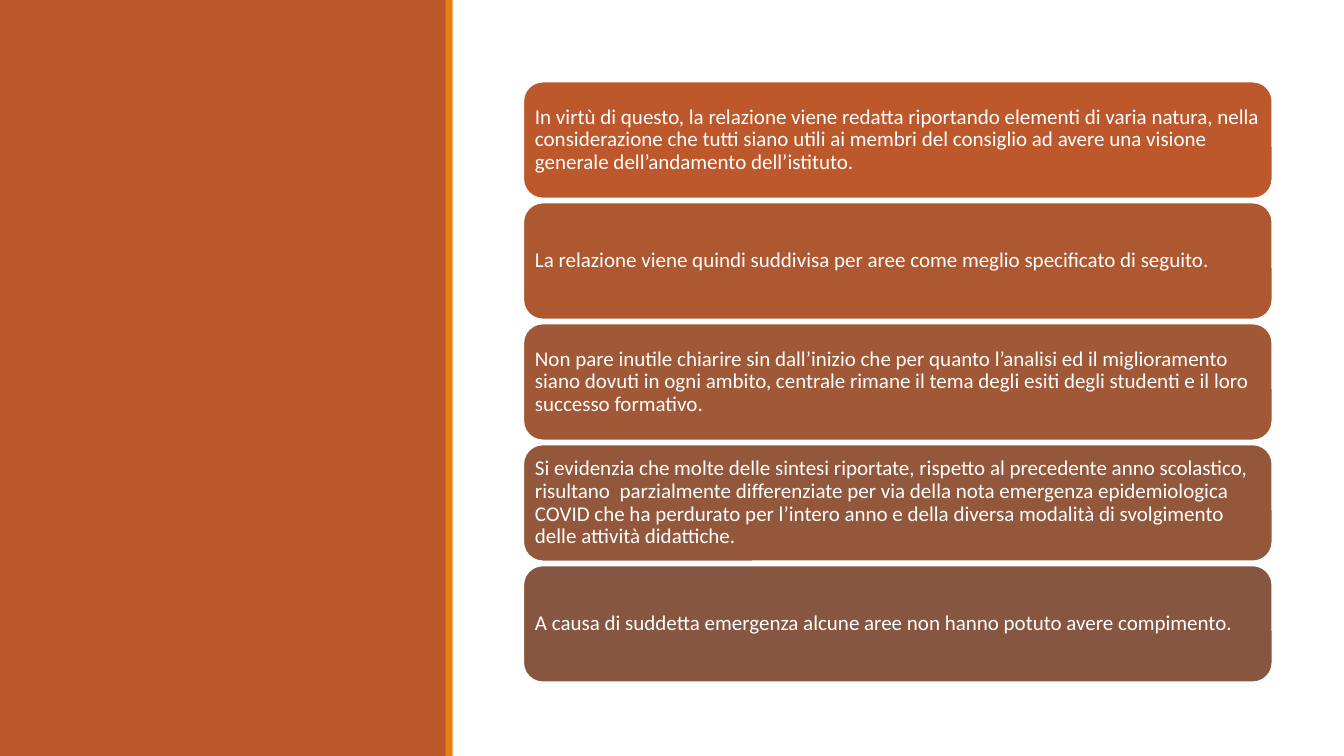
"""Builds a slide with a coloured side panel and five stacked statements."""
from pptx import Presentation
from pptx.dml.color import RGBColor
from pptx.enum.shapes import MSO_SHAPE
from pptx.enum.text import MSO_ANCHOR, PP_ALIGN
from pptx.util import Inches, Pt

STATEMENTS = [
    ("In virtù di questo, la relazione viene redatta riportando elementi di varia natura, "
     "nella considerazione che tutti siano utili ai membri del consiglio ad avere una "
     "visione generale dell’andamento dell’istituto.", "BD582C"),
    ("La relazione viene quindi suddivisa per aree come meglio specificato di seguito.",
     "AE5832"),
    ("Non pare inutile chiarire sin dall’inizio che per quanto l’analisi ed il "
     "miglioramento siano dovuti in ogni ambito, centrale rimane il tema degli esiti "
     "degli studenti e il loro successo formativo.", "A05837"),
    ("Si evidenzia che molte delle sintesi riportate, rispetto al precedente anno "
     "scolastico, risultano  parzialmente differenziate per via della nota emergenza "
     "epidemiologica COVID che ha perdurato per l’intero anno e della diversa modalità "
     "di svolgimento delle attività didattiche.", "93573C"),
    ("A causa di suddetta emergenza alcune aree non hanno potuto avere compimento.",
     "865640"),
]
THEME = {"panel": "BD582C", "accent": "E48312", "white": "FFFFFF",
         "font": "Calibri", "size": 15, "line": 1.25}
WIDTH, HEIGHT = 13.33, 7.5
LEFT, TOP, CARD_W, CARD_H, STEP = 5.19, 0.81, 7.43, 1.16, 1.2
INSET = 0.06


def add_block(slide, kind, box, fill):
    """Adds a filled shape without outline or shadow."""
    block = slide.shapes.add_shape(kind, *map(Inches, box))
    block.shadow.inherit = False
    block.fill.solid()
    block.fill.fore_color.rgb = RGBColor.from_string(fill)
    block.line.fill.background()
    return block


def add_card(slide, top, text, fill):
    """Adds one rounded card with its statement."""
    box = (LEFT, top, CARD_W, CARD_H)
    card = add_block(slide, MSO_SHAPE.ROUNDED_RECTANGLE, box, fill)
    white = RGBColor.from_string(THEME["white"])
    card.line.color.rgb = white
    card.line.width = Pt(THEME["line"])
    frame = card.text_frame
    frame.word_wrap = True
    frame.vertical_anchor = MSO_ANCHOR.MIDDLE
    frame.margin_left = frame.margin_right = Inches(INSET)
    frame.margin_top = frame.margin_bottom = Inches(INSET)
    para = frame.paragraphs[0]
    para.text = text
    para.alignment = PP_ALIGN.LEFT
    para.line_spacing = 0.9
    para.font.name = THEME["font"]
    para.font.size = Pt(THEME["size"])
    para.font.color.rgb = white


def main():
    """Builds and saves the slide."""
    deck = Presentation()
    deck.slide_width, deck.slide_height = Inches(WIDTH), Inches(HEIGHT)
    slide = deck.slides.add_slide(deck.slide_layouts[6])
    add_block(slide, MSO_SHAPE.RECTANGLE, (0, 0, 4.43, HEIGHT), THEME["panel"])
    add_block(slide, MSO_SHAPE.RECTANGLE, (4.42, 0, 0.07, HEIGHT), THEME["accent"])
    for row, (text, fill) in enumerate(STATEMENTS):
        add_card(slide, TOP + row * STEP, text, fill)
    deck.save("out.pptx")


if __name__ == "__main__":
    main()
